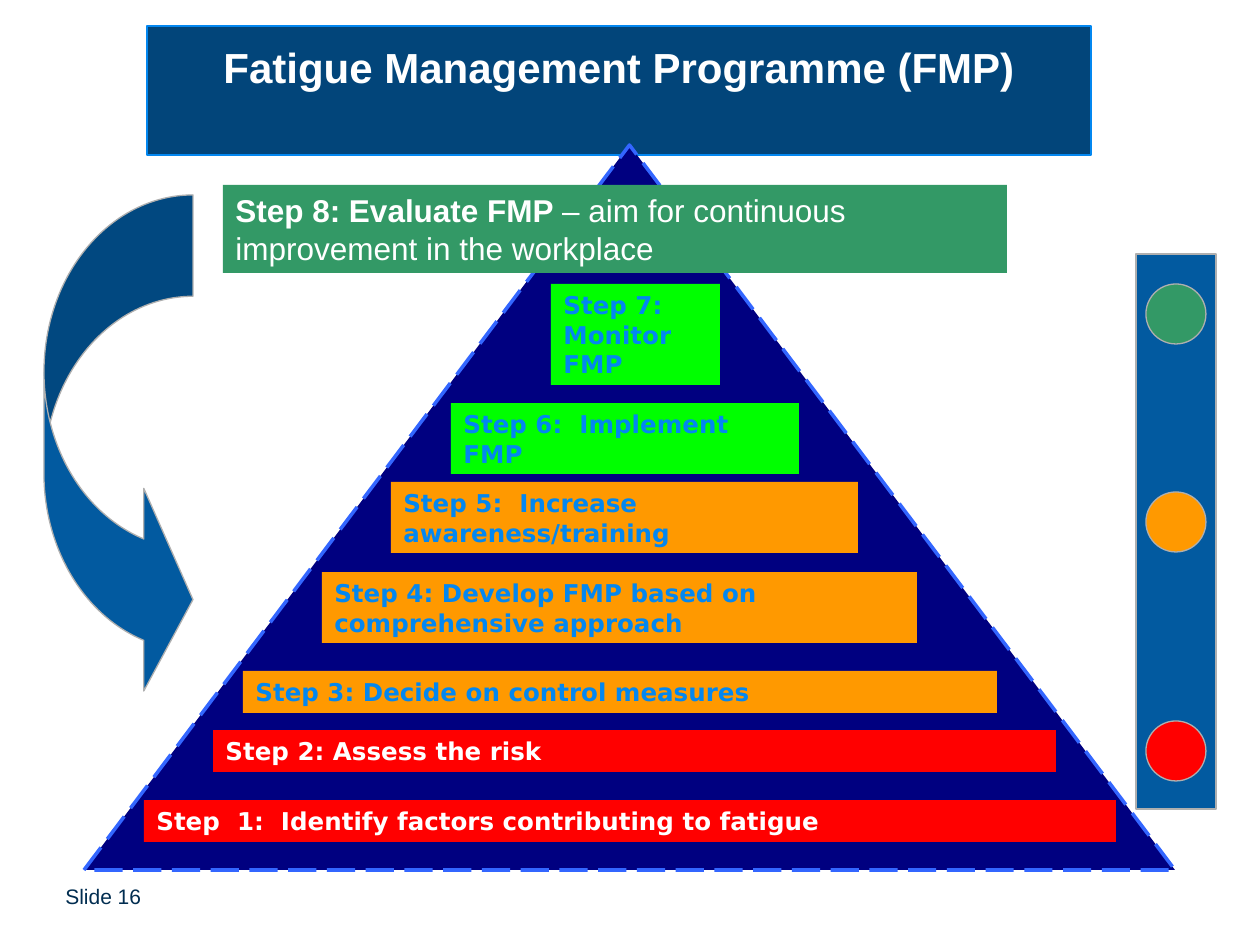
from pptx import Presentation
from pptx import util as u
from pptx.dml.color import RGBColor
from pptx.enum import dml, shapes, text

PX = u.Inches(1) // 126
SHAPE = shapes.MSO_SHAPE

WHITE, BRIGHT_BLUE, NAVY = "FFFFFF", "0387F0", "000080"
PANEL_BLUE, TITLE_BLUE, GREY = "025AA0", "02457A", "AFAFAF"
RED, AMBER, LIME, GREEN = "FF0000", "FF9900", "00FF00", "339966"

# wording, box in px, fill, text colour
STEPS = [
    ("Step  1:  Identify factors contributing to fatigue", (144, 800, 972, 42), RED, WHITE),
    ("Step 2: Assess the risk", (213, 730, 843, 42), RED, WHITE),
    ("Step 3: Decide on control measures", (243, 671, 754, 42), AMBER, BRIGHT_BLUE),
    ("Step 4: Develop FMP based on comprehensive approach", (322, 572, 595, 71), AMBER, BRIGHT_BLUE),
    ("Step 5:  Increase awareness/training", (391, 482, 467, 71), AMBER, BRIGHT_BLUE),
    ("Step 6:  Implement FMP", (451, 403, 348, 71), LIME, BRIGHT_BLUE),
    ("Step 7:  Monitor FMP", (551, 284, 169, 101), LIME, BRIGHT_BLUE),
]
LIGHTS = [(284, GREEN), (492, AMBER), (721, RED)]


def rgb(value):
    return RGBColor.from_string(value)


def scaled(box):
    return [length * PX for length in box]


def add_figure(slide, kind, box, fill, line=None, width=0.75):
    figure = slide.shapes.add_shape(kind, *scaled(box))
    figure.shadow.inherit = False
    figure.fill.solid()
    figure.fill.fore_color.rgb = rgb(fill)
    if line:
        figure.line.color.rgb = rgb(line)
        figure.line.width = u.Pt(width)
    else:
        figure.line.fill.background()
    return figure


def style_run(run, size, color, bold=False, font="Arial"):
    run.font.name = font
    run.font.size = u.Pt(size)
    run.font.bold = bold
    run.font.color.rgb = rgb(color)


def write(figure, wording, size, color, bold=True, font="Arial",
          align=text.PP_ALIGN.LEFT, anchor=text.MSO_ANCHOR.TOP):
    """Put one styled paragraph in the figure and return it."""
    frame = figure.text_frame
    frame.text = wording
    frame.word_wrap = True
    frame.vertical_anchor = anchor
    paragraph = frame.paragraphs[0]
    paragraph.alignment = align
    style_run(paragraph.runs[0], size, color, bold, font)
    return paragraph


def add_title(slide):
    banner = add_figure(slide, SHAPE.RECTANGLE, (147, 26, 944, 129), TITLE_BLUE, BRIGHT_BLUE)
    heading = write(banner, "Fatigue Management Programme (FMP)", 24, WHITE,
                    align=text.PP_ALIGN.CENTER)
    heading.line_spacing = u.Pt(34)


def add_pyramid(slide):
    pyramid = add_figure(slide, SHAPE.FLOWCHART_EXTRACT, (84, 145, 1091, 725),
                         NAVY, "3366FF", 2)
    pyramid.line.dash_style = dml.MSO_LINE.LONG_DASH
    for wording, box, fill, color in STEPS:
        step = add_figure(slide, SHAPE.RECTANGLE, box, fill)
        write(step, wording, 14, color, font="DejaVu Sans")

    evaluation = add_figure(slide, SHAPE.RECTANGLE, (223, 185, 784, 88), GREEN)
    paragraph = write(evaluation, "Step 8: Evaluate FMP ", 18, WHITE)
    aim = paragraph.add_run()
    aim.text = "– aim for continuous improvement in the workplace"
    style_run(aim, 18, WHITE)


def add_feedback_arrow(slide):
    arrow = add_figure(slide, SHAPE.CURVED_RIGHT_ARROW, (44, 195, 149, 506),
                       PANEL_BLUE, GREY)
    for index, value in enumerate((0.68, 1.36, 0.33)):
        arrow.adjustments[index] = value


def add_traffic_light(slide):
    add_figure(slide, SHAPE.RECTANGLE, (1136, 254, 80, 555), PANEL_BLUE, GREY)
    for top, color in LIGHTS:
        add_figure(slide, SHAPE.OVAL, (1146, top, 60, 60), color, GREY)


def add_slide_number(slide):
    label = slide.shapes.add_textbox(*scaled((53, 876, 199, 41)))
    write(label, "Slide 16", 12, "012D50", bold=False, anchor=text.MSO_ANCHOR.MIDDLE)


def main():
    deck = Presentation()
    deck.slide_width, deck.slide_height = u.Inches(10), u.Inches(7.5)
    slide = deck.slides.add_slide(deck.slide_layouts[6])
    add_slide_number(slide)
    add_title(slide)
    add_pyramid(slide)
    add_feedback_arrow(slide)
    add_traffic_light(slide)
    deck.save("out.pptx")


if __name__ == "__main__":
    main()
